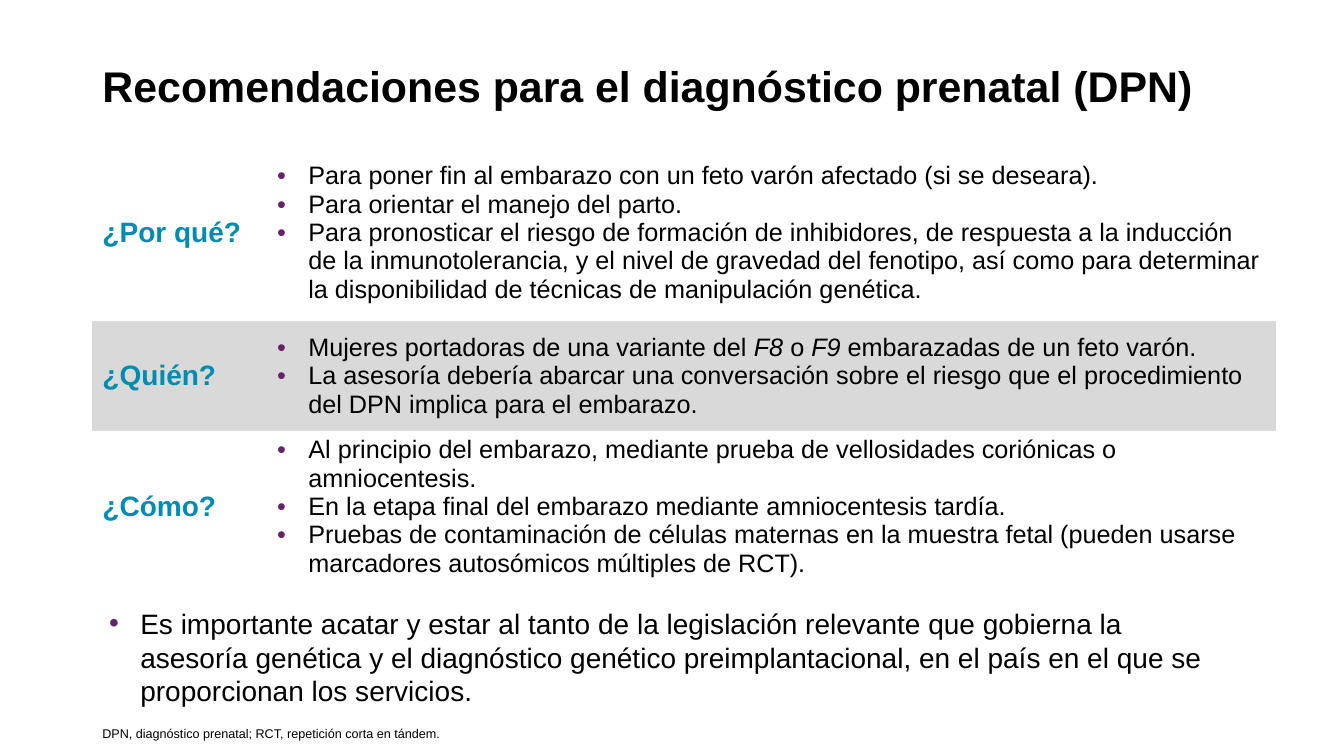
import dataclasses
import typing

import lxml.etree
import pptx
import pptx.dml.color
import pptx.enum.text
import pptx.oxml.ns
import pptx.util

# The slide is a grid of 160 columns by 90 rows.
SLIDE_WIDTH = pptx.util.Inches(13.333)
SLIDE_HEIGHT = pptx.util.Inches(7.5)
GRID_COLUMNS, GRID_ROWS = 160, 90

LEFT_MARGIN = 11
LABEL_COLUMNS, ADVICE_COLUMNS = 20.8, 120.1
TABLE_TOP = 17.2
INDENT = pptx.util.Inches(0.31)
NO_STYLE = "{2D5ABB26-0587-4C30-8999-92F81FD0307C}"

BLACK, WHITE, GREY = "000000", "FFFFFF", "D9D9D9"
TEAL, PURPLE = "008BB0", "642566"

TITLE_FORMAT = {"size": pptx.util.Pt(30.6), "bold": True}
LABEL_FORMAT = {"size": pptx.util.Pt(20), "bold": True}
ADVICE_FORMAT = {"size": pptx.util.Pt(18), "bold": False}
CLOSING_FORMAT = {"size": pptx.util.Pt(20)}
FOOTNOTE_FORMAT = {"size": pptx.util.Pt(9)}


@dataclasses.dataclass
class Area:
    column: float
    row: float
    columns: float
    rows: float


@dataclasses.dataclass
class Question:
    label: str
    rows: float
    fill: str
    advice: list[str]


QUESTIONS = [
    Question("¿Por qué?", 21, WHITE, [
        "Para poner fin al embarazo con un feto varón afectado (si se deseara).",
        "Para orientar el manejo del parto.",
        "Para pronosticar el riesgo de formación de inhibidores, de respuesta a la "
        "inducción de la inmunotolerancia, y el nivel de gravedad del fenotipo, así como "
        "para determinar la disponibilidad de técnicas de manipulación genética.",
    ]),
    Question("¿Quién?", 13.1, GREY, [
        "Mujeres portadoras de una variante del *F8* o *F9* embarazadas de un feto varón.",
        "La asesoría debería abarcar una conversación sobre el riesgo que el "
        "procedimiento del DPN implica para el embarazo.",
    ]),
    Question("¿Cómo?", 18, WHITE, [
        "Al principio del embarazo, mediante prueba de vellosidades coriónicas o "
        "amniocentesis.",
        "En la etapa final del embarazo mediante amniocentesis tardía.",
        "Pruebas de contaminación de células maternas en la muestra fetal (pueden usarse "
        "marcadores autosómicos múltiples de RCT).",
    ]),
]
CLOSING = (
    "Es importante acatar y estar al tanto de la legislación relevante que gobierna la "
    "asesoría genética y el diagnóstico genético preimplantacional, en el país en el que "
    "se proporcionan los servicios."
)


def across(columns: float) -> int:
    return round(SLIDE_WIDTH * columns / GRID_COLUMNS)


def down(rows: float) -> int:
    return round(SLIDE_HEIGHT * rows / GRID_ROWS)


def frame(area: Area) -> tuple[int, int, int, int]:
    return across(area.column), down(area.row), across(area.columns), down(area.rows)


def color(value: str) -> pptx.dml.color.RGBColor:
    return pptx.dml.color.RGBColor.from_string(value)


def write(para: typing.Any, text: str, values: dict, ink: str = BLACK) -> None:
    """Add text to a paragraph; parts between asterisks become italic."""
    for index, part in enumerate(text.split("*")):
        span = para.add_run()
        span.text = part
        for name, value in {"name": "Arial", **values}.items():
            setattr(span.font, name, value)
        if index % 2:
            span.font.italic = True
        span.font.color.rgb = color(ink)


def add_bullet(para: typing.Any) -> None:
    properties = para._p.get_or_add_pPr()
    properties.set("marL", str(INDENT))
    properties.set("indent", str(-INDENT))
    qn = pptx.oxml.ns.qn
    bullet_color = lxml.etree.SubElement(properties, qn("a:buClr"))
    lxml.etree.SubElement(bullet_color, qn("a:srgbClr")).set("val", PURPLE)
    lxml.etree.SubElement(properties, qn("a:buFont")).set("typeface", "Arial")
    lxml.etree.SubElement(properties, qn("a:buChar")).set("char", "•")


def write_bullets(text_frame: typing.Any, items: list[str], values: dict,
                  pitch: float) -> None:
    """Write a bulleted list with a line pitch in points."""
    for index, item in enumerate(items):
        para = text_frame.add_paragraph() if index else text_frame.paragraphs[0]
        add_bullet(para)
        para.line_spacing = pptx.util.Pt(pitch)
        write(para, item, values)


def add_title(page: typing.Any, text: str, area: Area) -> None:
    title = page.shapes.title
    title.left, title.top, title.width, title.height = frame(area)
    title.text_frame.auto_size = pptx.enum.text.MSO_AUTO_SIZE.NONE
    title.text_frame.vertical_anchor = pptx.enum.text.MSO_ANCHOR.MIDDLE
    para = title.text_frame.paragraphs[0]
    para.alignment = pptx.enum.text.PP_ALIGN.LEFT
    write(para, text, TITLE_FORMAT)


def add_text_frame(page: typing.Any, area: Area) -> typing.Any:
    box = page.shapes.add_textbox(*frame(area))
    box.text_frame.word_wrap = True
    return box.text_frame


def add_questions(page: typing.Any, questions: list[Question]) -> None:
    widths = [LABEL_COLUMNS, ADVICE_COLUMNS]
    area = Area(LEFT_MARGIN, TABLE_TOP, sum(widths), sum(q.rows for q in questions))
    table = page.shapes.add_table(len(questions), len(widths), *frame(area)).table
    table.first_row = table.horz_banding = False
    table._tbl.tblPr.find(pptx.oxml.ns.qn("a:tableStyleId")).text = NO_STYLE
    for column, width in zip(table.columns, widths):
        column.width = across(width)
    for row, question in zip(table.rows, questions):
        row.height = down(question.rows)
        for cell in row.cells:
            cell.fill.solid()
            cell.fill.fore_color.rgb = color(question.fill)
            cell.vertical_anchor = pptx.enum.text.MSO_ANCHOR.MIDDLE
        label, advice = row.cells
        write(label.text_frame.paragraphs[0], question.label, LABEL_FORMAT, TEAL)
        write_bullets(advice.text_frame, question.advice, ADVICE_FORMAT, 20.2)


def main() -> None:
    deck = pptx.Presentation()
    deck.slide_width, deck.slide_height = SLIDE_WIDTH, SLIDE_HEIGHT
    page = deck.slides.add_slide(deck.slide_layouts.get_by_name("Title Only"))

    add_title(page, "Recomendaciones para el diagnóstico prenatal (DPN)",
              Area(LEFT_MARGIN, 3, 138, 14.3))
    add_questions(page, QUESTIONS)

    closing = add_text_frame(page, Area(11.8, 71.6, 134.4, 13.3))
    write_bullets(closing, [CLOSING], CLOSING_FORMAT, 24)

    footnote = add_text_frame(page, Area(LEFT_MARGIN, 83.4, 130.2, 4.8))
    footnote.vertical_anchor = pptx.enum.text.MSO_ANCHOR.BOTTOM
    footnote.margin_bottom = 0
    write(footnote.paragraphs[0],
          "DPN, diagnóstico prenatal; RCT, repetición corta en tándem.", FOOTNOTE_FORMAT)

    deck.save("out.pptx")


if __name__ == "__main__":
    main()
